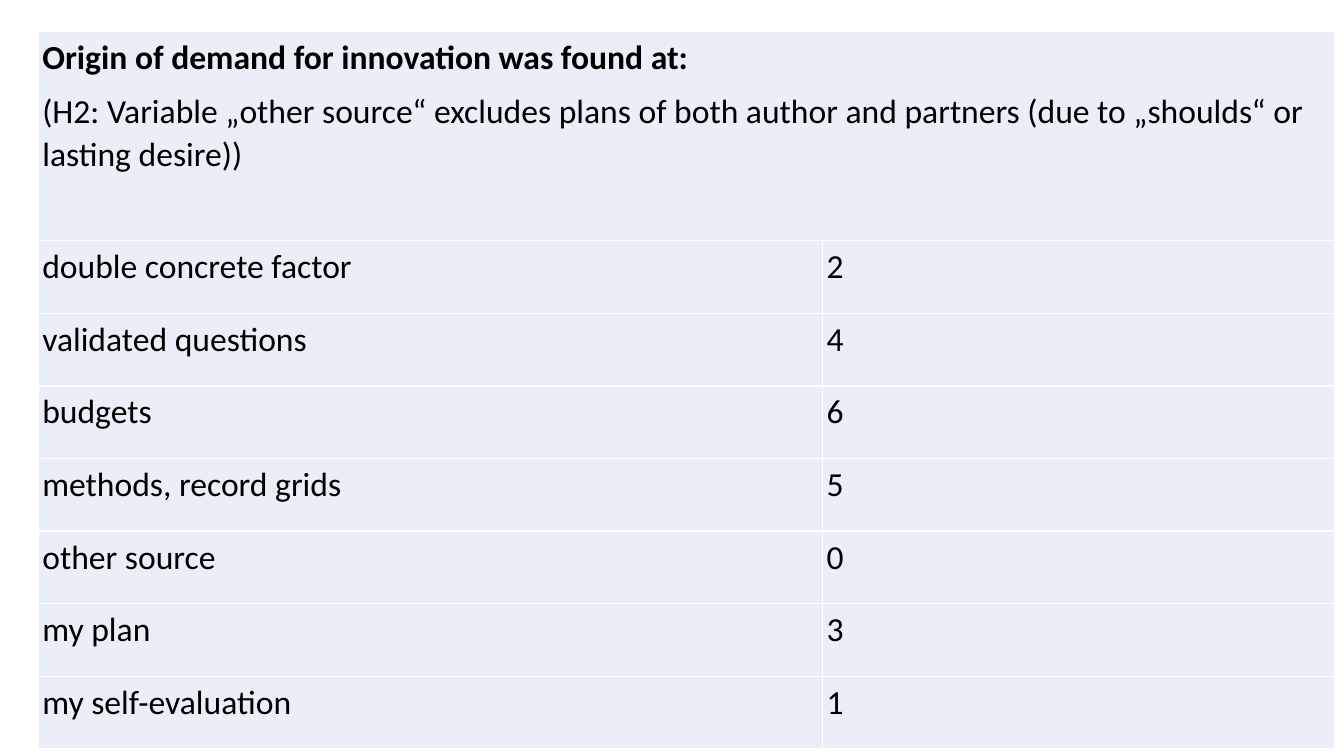
from dataclasses import dataclass

from lxml.etree import SubElement
from pptx import Presentation
from pptx.dml.color import RGBColor
from pptx.enum.text import PP_ALIGN
from pptx.oxml.ns import qn
from pptx.table import Table, _Cell as Cell
from pptx.util import Emu, Pt

EMU_PER_PX = 9144  # 100 px to the inch


@dataclass(frozen=True)
class Theme:
    font: str = "Calibri"
    text_size: int = 24
    text: str = "000000"
    cell_fill: str = "EAEFF7"
    border: str = "FFFFFF"
    border_width: int = 1
    line_spacing: float = 1.05
    space_after: int = 8
    cell_margin: int = 4


@dataclass(frozen=True)
class Origin:
    source: str
    count: int


THEME = Theme()
SLIDE_WIDTH, SLIDE_HEIGHT = 1333, 750
TABLE_LEFT, TABLE_TOP = 38, 31
COLUMN_WIDTHS = (778, 508)
HEADING_HEIGHT, ORIGIN_HEIGHT = 208, 72

HEADING = "Origin of demand for innovation was found at:"
HYPOTHESIS = (
    "(H2: Variable „other source“ excludes plans of both author and partners "
    "(due to „shoulds“ or lasting desire))"
)
ORIGINS = (
    Origin("double concrete factor", 2),
    Origin("validated questions", 4),
    Origin("budgets", 6),
    Origin("methods, record grids", 5),
    Origin("other source", 0),
    Origin("my plan", 3),
    Origin("my self-evaluation", 1),
)


def px(length: int) -> Emu:
    return Emu(length * EMU_PER_PX)


def add_borders(cell: Cell) -> None:
    """Draw all four cell edges; the schema wants them ahead of the fill."""
    properties = cell._tc.get_or_add_tcPr()
    for position, edge in enumerate(("a:lnL", "a:lnR", "a:lnT", "a:lnB")):
        line = SubElement(properties, qn(edge), w=str(Pt(THEME.border_width)))
        fill = SubElement(line, qn("a:solidFill"))
        SubElement(fill, qn("a:srgbClr"), val=THEME.border)
        properties.insert(position, line)


def style_cell(cell: Cell) -> None:
    margin = px(THEME.cell_margin)
    cell.margin_left = cell.margin_right = margin
    cell.margin_top = cell.margin_bottom = margin
    cell.fill.solid()
    cell.fill.fore_color.rgb = RGBColor.from_string(THEME.cell_fill)
    add_borders(cell)
    for paragraph in cell.text_frame.paragraphs:
        paragraph.alignment = PP_ALIGN.LEFT
        paragraph.line_spacing = THEME.line_spacing
        paragraph.space_after = Pt(THEME.space_after)
        for run in paragraph.runs:
            run.font.name = THEME.font
            run.font.size = Pt(THEME.text_size)
            run.font.bold = run.text == HEADING
            run.font.color.rgb = RGBColor.from_string(THEME.text)


def fill_table(table: Table) -> None:
    for column, width in zip(table.columns, COLUMN_WIDTHS):
        column.width = px(width)
    for row in table.rows:
        row.height = px(ORIGIN_HEIGHT)
    table.rows[0].height = px(HEADING_HEIGHT)

    heading = table.cell(0, 0)
    heading.merge(table.cell(0, 1))
    heading.text_frame.text = f"{HEADING}\n{HYPOTHESIS}"
    for row, origin in enumerate(ORIGINS, start=1):
        table.cell(row, 0).text_frame.text = origin.source
        table.cell(row, 1).text_frame.text = str(origin.count)

    for cell in table.iter_cells():
        style_cell(cell)


def main() -> None:
    presentation = Presentation()
    presentation.slide_width = px(SLIDE_WIDTH)
    presentation.slide_height = px(SLIDE_HEIGHT)
    slide = presentation.slides.add_slide(presentation.slide_layouts[6])
    origins_frame = slide.shapes.add_table(
        len(ORIGINS) + 1,
        len(COLUMN_WIDTHS),
        px(TABLE_LEFT),
        px(TABLE_TOP),
        px(sum(COLUMN_WIDTHS)),
        px(HEADING_HEIGHT + len(ORIGINS) * ORIGIN_HEIGHT),
    )
    fill_table(origins_frame.table)
    presentation.save("out.pptx")


if __name__ == "__main__":
    main()
